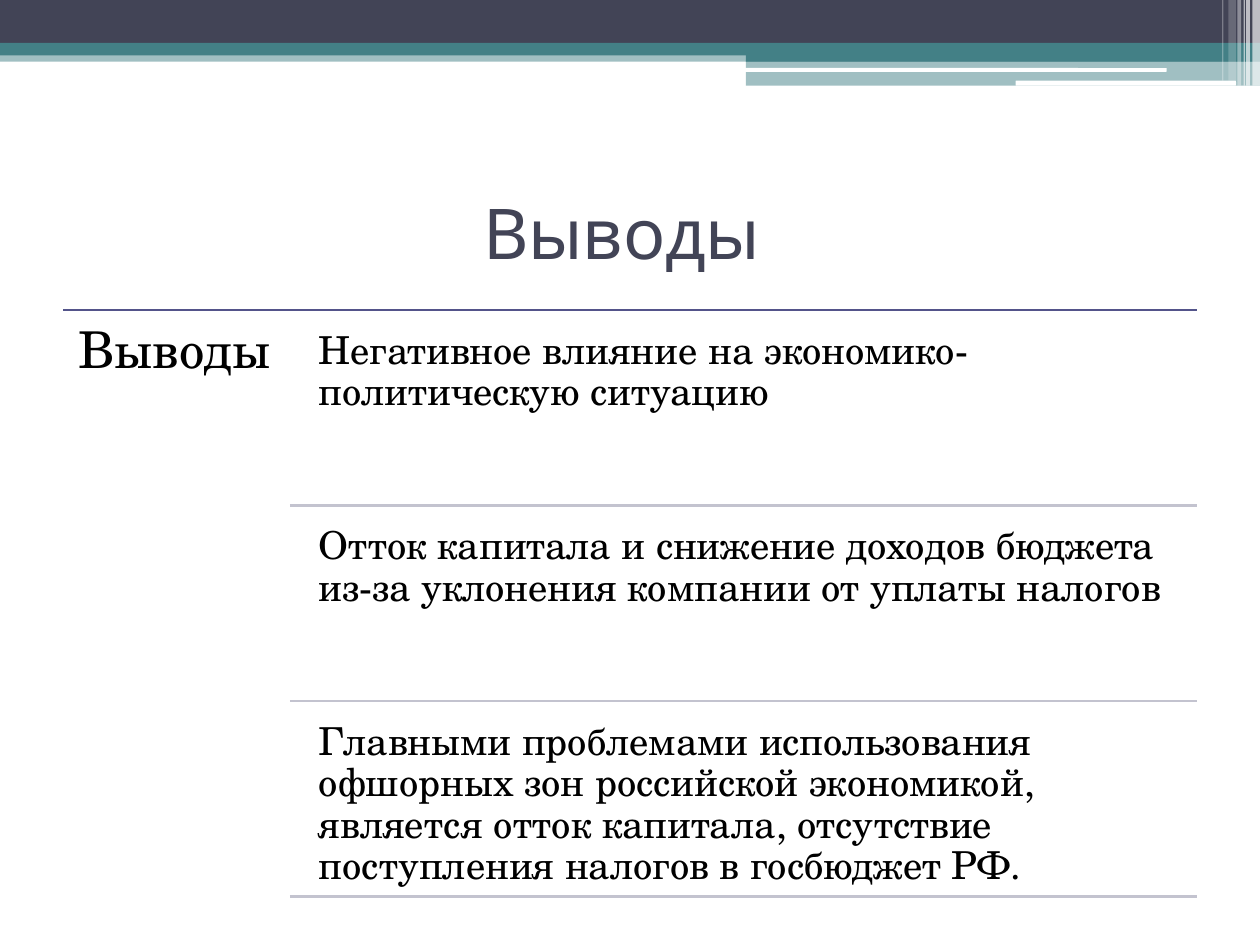
from lxml.etree import SubElement
from pptx import Presentation
from pptx.dml.color import RGBColor
from pptx.enum.shapes import MSO_CONNECTOR as Connector, MSO_SHAPE as Shape
from pptx.enum.text import MSO_ANCHOR as Anchor, PP_ALIGN as Align
from pptx.oxml.ns import qn
from pptx.util import Inches, Pt

WIDTH, HEIGHT = 10, 7.5
NAVY, TEAL, WHITE, BLACK = "424456", "438086", "FFFFFF", "000000"
VIOLET, PALE = "53548A", "C3C3CF"
SERIF, SANS = "TeX Gyre Schola", "Karla"
CONCLUSIONS = [
    "Негативное влияние на экономико-политическую ситуацию",
    "Отток капитала и снижение доходов бюджета из-за уклонения компании от уплаты налогов",
    "Главными проблемами использования офшорных зон российской экономикой, "
    "является отток капитала, отсутствие поступления налогов в госбюджет РФ.",
]


def color(value):
    return RGBColor.from_string(value)


def add_bar(page, box, fill, opacity=100, rounded=False):
    kind = Shape.ROUNDED_RECTANGLE if rounded else Shape.RECTANGLE
    bar = page.shapes.add_shape(kind, *map(Inches, box))
    bar.shadow.inherit = False
    bar.line.fill.background()
    bar.fill.solid()
    bar.fill.fore_color.rgb = color(fill)
    if opacity < 100:
        tint = bar.fill._xPr.find(f".//{qn('a:srgbClr')}")
        SubElement(tint, qn("a:alpha"), val=str(opacity * 1000))


def add_rule(page, left, right, top, stroke):
    ends = map(Inches, (left, top, right, top))
    rule = page.shapes.add_connector(Connector.STRAIGHT, *ends)
    rule.line.color.rgb = color(stroke)
    rule.line.width = Pt(1.5)
    SubElement(rule._element.spPr, qn("a:effectLst"))


def add_text(page, box, text, size, font=SERIF, ink=BLACK, inset=0.09,
             align=Align.LEFT, anchor=Anchor.TOP, spacing=0.9):
    frame = page.shapes.add_textbox(*map(Inches, box)).text_frame
    frame.word_wrap = True
    frame.vertical_anchor = anchor
    frame.margin_left = frame.margin_right = Inches(inset)
    frame.margin_top = frame.margin_bottom = Inches(inset)
    para = frame.paragraphs[0]
    para.alignment = align
    para.line_spacing = spacing
    span = para.add_run()
    span.text = text
    span.font.size = Pt(size)
    span.font.name = font
    span.font.color.rgb = color(ink)


def draw_header(page, box):
    left, top, width, height = box
    right = left + width
    split = left + 0.592 * width
    add_bar(page, (left, top + 0.4, width, 0.09), TEAL, 50)
    add_bar(page, (left, top, width, 0.34), NAVY)
    add_bar(page, (left, top + 0.34, width, 0.1), TEAL)
    add_bar(page, (split, top + 0.39, right - split, 0.1), TEAL)
    add_bar(page, (split, top + 0.48, right - split, 0.2), TEAL, 50)
    add_bar(page, (split - 0.01, top + 0.54, 3.35, 0.03), WHITE, rounded=True)
    add_bar(page, (right - 1.94, top + 0.64, 1.75, 0.04), WHITE, rounded=True)
    stripes = [(0.06, 0.06, 0, 65), (0.11, 0.03, 0, 65), (0.13, 0.01, 0, 60),
               (0.18, 0.03, 0, 40), (0.25, 0.06, 0.04, 20), (0.3, 0.01, 0.04, 30)]
    for offset, thickness, trim, opacity in stripes:
        add_bar(page, (right - offset, top, thickness, height - trim), WHITE, opacity)


def draw_title(page, box):
    add_text(page, box, "Выводы ", 40, font=SANS, ink=NAVY, inset=0.05,
             align=Align.CENTER, anchor=Anchor.MIDDLE, spacing=1)


def draw_conclusions(page, box):
    left, top, width, height = box
    right = left + width
    column = width / 5
    gap = 0.075
    row = (height - gap) / len(CONCLUSIONS)
    text_left = left + column + 0.14
    add_rule(page, left, right, top, VIOLET)
    add_text(page, (left, top, column, height), "Выводы", 29, inset=0.12)
    for index, conclusion in enumerate(CONCLUSIONS):
        row_top = top + gap + index * row
        add_text(page, (text_left, row_top, right - text_left, row - gap), conclusion, 22)
        add_rule(page, left + column, right, row_top + row - gap, PALE)


def main():
    deck = Presentation()
    deck.slide_width, deck.slide_height = Inches(WIDTH), Inches(HEIGHT)
    page = deck.slides.add_slide(deck.slide_layouts[6])
    margin = 0.05 * WIDTH
    content = WIDTH - 2 * margin
    draw_header(page, (0, 0, WIDTH, 0.68))
    draw_title(page, (margin, HEIGHT / 6, content, 1.17))
    draw_conclusions(page, (margin, 2.46, content, 4.73))
    deck.save("out.pptx")


if __name__ == "__main__":
    main()
